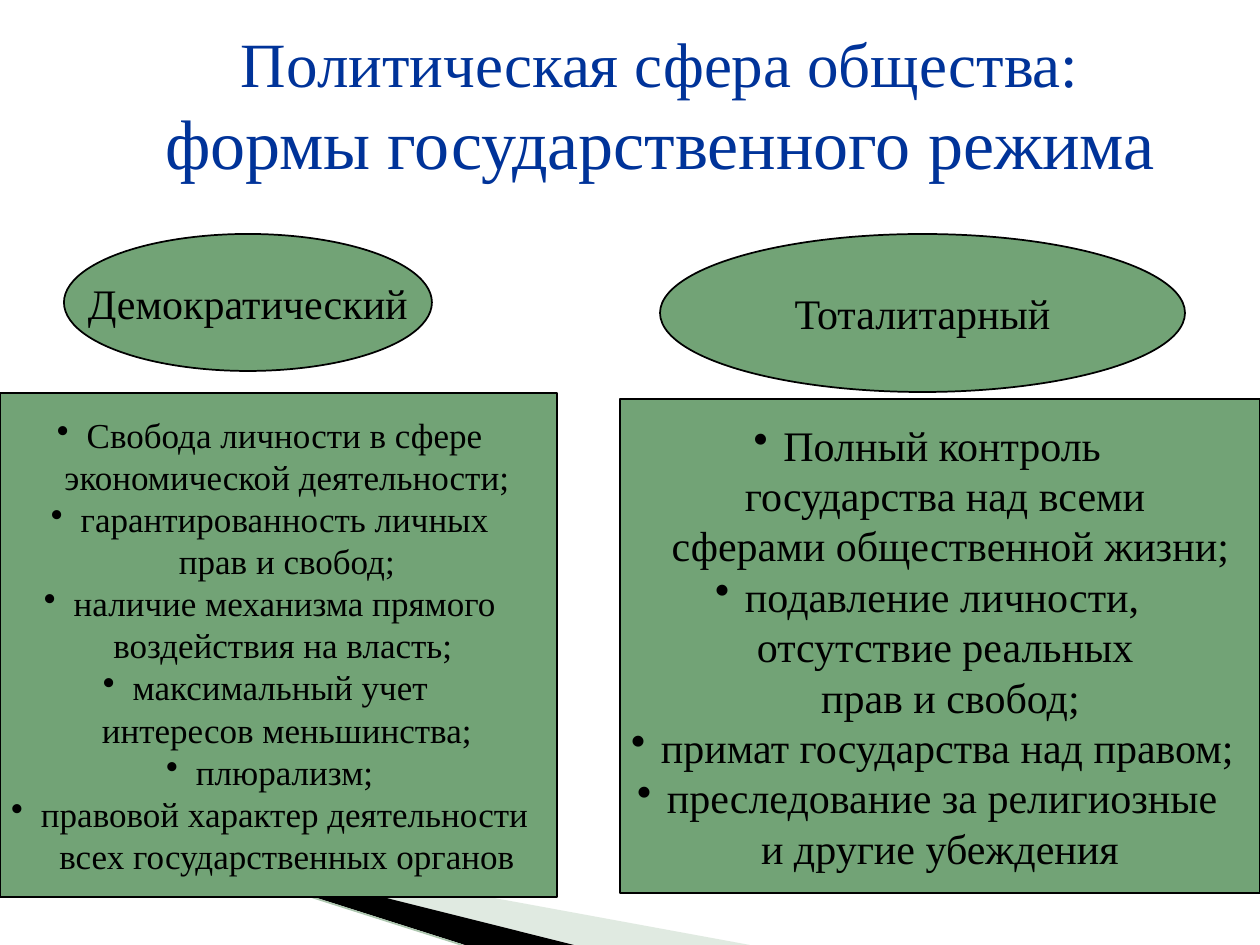
from dataclasses import dataclass

from lxml import etree
from pptx import Presentation
from pptx import util as u
from pptx.dml.color import RGBColor
from pptx.enum import shapes, text
from pptx.oxml.ns import qn

SCALE = u.Inches(1) / 126


def px(length):
    return u.Emu(round(length * SCALE))


@dataclass(frozen=True)
class Theme:
    font: str = "Times New Roman"
    title: str = "003399"
    ink: str = "000000"
    panel: str = "72A376"
    ribbon: str = "B3CBB5"
    edge: str = "ACC6AE"
    title_sizes: tuple = (36, 40)
    large: int = 24
    small: int = 20


class Slide:
    def __init__(self, page, theme):
        self.page = page
        self.theme = theme

    def style_span(self, span, size, color):
        span.font.name = self.theme.font
        span.font.size = u.Pt(size)
        span.font.color.rgb = RGBColor.from_string(color)

    def fill(self, shape, color):
        shape.shadow.inherit = False
        shape.fill.solid()
        shape.fill.fore_color.rgb = RGBColor.from_string(color)

    def ribbon(self, points, color, opacity=100):
        builder = self.page.shapes.build_freeform(*points[0], scale=SCALE)
        builder.add_line_segments(points[1:], close=True)
        shape = builder.convert_to_shape()
        self.fill(shape, color)
        shape.line.fill.background()
        if opacity < 100:
            tint = shape._element.spPr.find(".//" + qn("a:srgbClr"))
            etree.SubElement(tint, qn("a:alpha")).set("val", str(opacity * 1000))

    def line(self, start, end, color, width):
        line = self.page.shapes.add_connector(
            shapes.MSO_CONNECTOR.STRAIGHT, *map(px, start + end))
        line.line.color.rgb = RGBColor.from_string(color)
        line.line.width = u.Pt(width)
        etree.SubElement(line._element.spPr, qn("a:effectLst"))

    def title(self, bounds, lines):
        box = self.page.shapes.add_textbox(*map(px, bounds))
        frame = box.text_frame
        frame.word_wrap = True
        frame.vertical_anchor = text.MSO_ANCHOR.MIDDLE
        para = frame.paragraphs[0]
        para.text = "\v".join(lines)
        para.alignment = text.PP_ALIGN.CENTER
        for span, size in zip(para.runs, self.theme.title_sizes):
            self.style_span(span, size, self.theme.title)

    def panel(self, kind, bounds, wrap):
        shape = self.page.shapes.add_shape(kind, *map(px, bounds))
        self.fill(shape, self.theme.panel)
        shape.line.color.rgb = RGBColor.from_string(self.theme.ink)
        shape.line.width = u.Pt(1)
        frame = shape.text_frame
        frame.word_wrap = wrap
        frame.vertical_anchor = text.MSO_ANCHOR.MIDDLE
        frame.margin_left = frame.margin_right = 0
        return frame

    def set_words(self, para, words, size):
        para.text = words
        para.alignment = text.PP_ALIGN.CENTER
        self.style_span(para.runs[0], size, self.theme.ink)

    def heading(self, bounds, words):
        frame = self.panel(shapes.MSO_SHAPE.OVAL, bounds, False)
        self.set_words(frame.paragraphs[0], words, self.theme.large)

    def bullet(self, para):
        props = para._p.get_or_add_pPr()
        color = etree.SubElement(props, qn("a:buClr"))
        etree.SubElement(color, qn("a:srgbClr")).set("val", self.theme.ink)
        etree.SubElement(props, qn("a:buChar")).set("char", "•")

    def features(self, bounds, items, size):
        frame = self.panel(shapes.MSO_SHAPE.RECTANGLE, bounds, True)
        para = frame.paragraphs[0]
        for item in items:
            for number, (words, indent) in enumerate(item):
                if para is None:
                    para = frame.add_paragraph()
                if number == 0:
                    self.bullet(para)
                self.set_words(para, words, size)
                if indent:
                    para._p.get_or_add_pPr().set("marL", str(px(indent)))
                para = None


FREEDOMS = [
    [("Свобода личности в сфере", 0), ("экономической деятельности;", 17)],
    [("гарантированность личных", 0), ("прав и свобод;", 17)],
    [("наличие механизма прямого", 0), ("воздействия на власть;", 9)],
    [("максимальный учет ", 0), ("интересов меньшинства;", 17)],
    [("плюрализм;", 0)],
    [("правовой характер деятельности", 0), ("всех государственных органов", 17)],
]
CONTROLS = [
    [("Полный контроль ", 0), ("государства над всеми ", 21),
     ("сферами общественной жизни;", 21)],
    [("подавление личности, ", 0), ("отсутствие реальных ", 21),
     ("прав и свобод;", 21)],
    [("примат государства над правом;", 0)],
    [("преследование за религиозные ", 0), ("и другие убеждения", 0)],
]


def main():
    deck = Presentation()
    deck.slide_width, deck.slide_height = px(1260), px(945)
    theme = Theme()
    slide = Slide(deck.slides.add_slide(deck.slide_layouts[6]), theme)

    slide.ribbon([(69, 820), (750, 945), (575, 945), (69, 819)], theme.ribbon, 40)
    slide.ribbon([(67, 818), (574, 945), (465, 945), (68, 819)], theme.ink)
    slide.line((0, 798), (462, 945), theme.edge, 0.95)
    slide.title((98, 20, 1124, 168),
                ("Политическая сфера общества:", "формы государственного режима"))
    slide.heading((64, 234, 368, 137), "Демократический")
    slide.features((0, 393, 557, 504), FREEDOMS, theme.small)
    slide.heading((660, 234, 525, 158), "Тоталитарный")
    slide.features((620, 399, 640, 494), CONTROLS, theme.large)
    deck.save("out.pptx")


if __name__ == "__main__":
    main()
